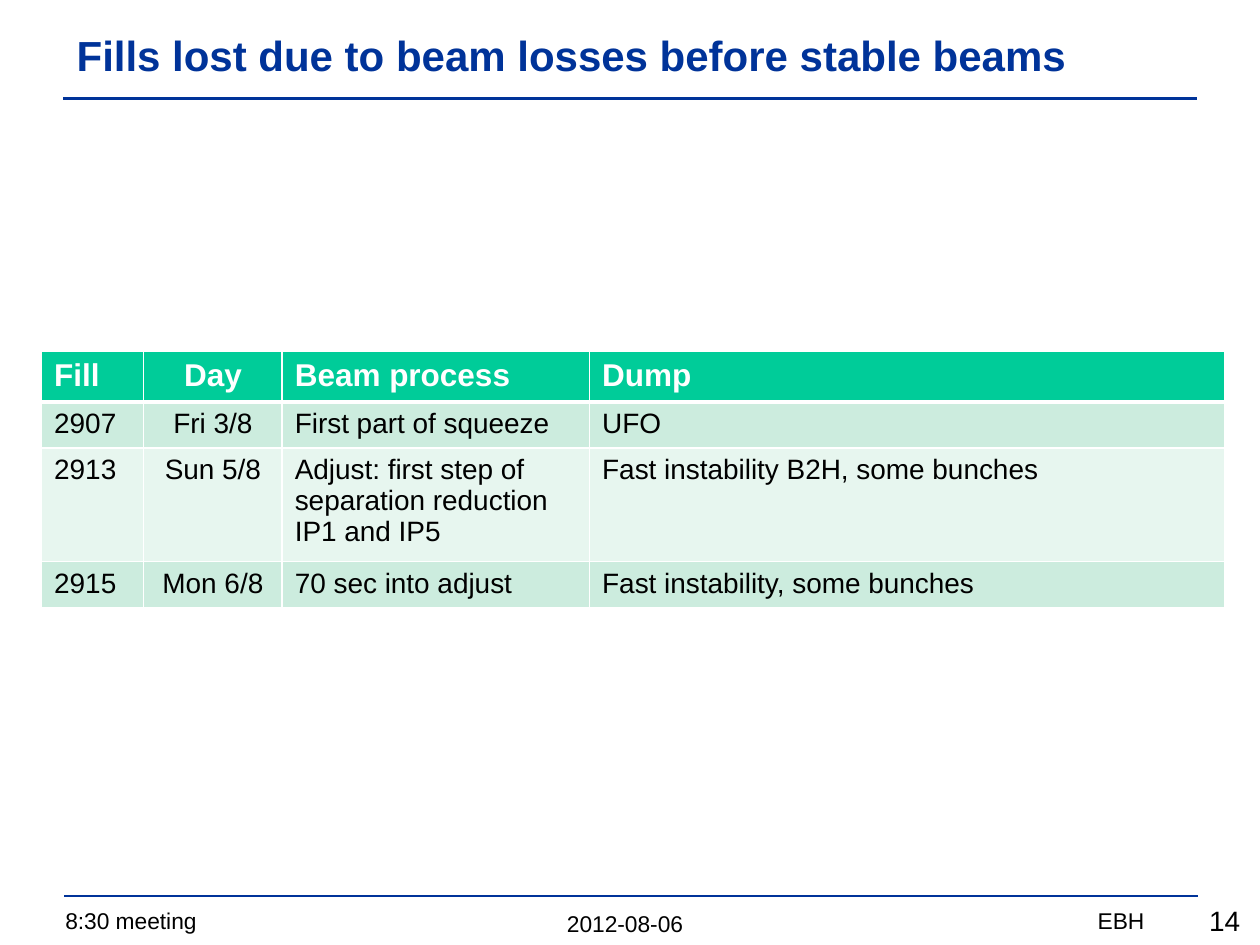
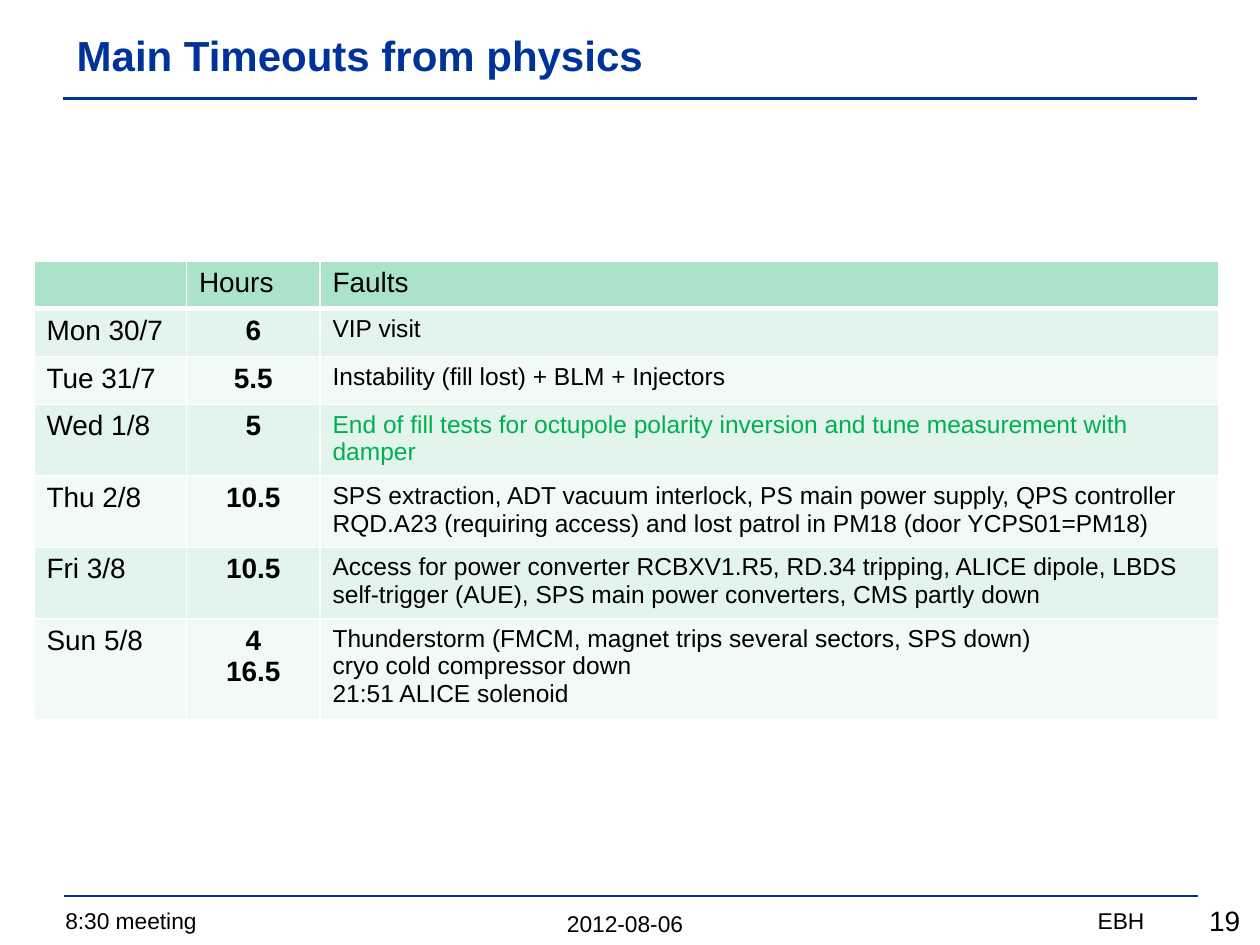
import pptx
import pptx.util
import pptx.dml.color
import pptx.enum.shapes
import pptx.enum.text
import pptx.oxml.ns
import lxml.etree
from dataclasses import dataclass

Inches = pptx.util.Inches
Pt = pptx.util.Pt
RGB = pptx.dml.color.RGBColor.from_string
ALIGN = pptx.enum.text.PP_ALIGN
ANCHOR = pptx.enum.text.MSO_ANCHOR
qn = pptx.oxml.ns.qn


@dataclass(frozen=True)
class Theme:
    font: str = "Arial"
    navy: str = "003399"
    black: str = "000000"
    white: str = "FFFFFF"
    green: str = "00B050"
    title: int = 24
    head: int = 18
    body: int = 16
    detail: int = 14
    footer: int = 13
    rule: float = 1.5
    border: int = 1
    head_border: int = 3


theme = Theme()


def style(p, size, color=theme.black, bold=False, align=ALIGN.LEFT):
    p.alignment = align
    p.font.name = theme.font
    p.font.size = Pt(size)
    p.font.bold = bold
    p.font.color.rgb = RGB(color)


def add_text(s, box, text, size, color=theme.black, bold=False, align=ALIGN.LEFT):
    sp = s.shapes.add_textbox(*map(Inches, box))
    tf = sp.text_frame
    tf.word_wrap = True
    tf.vertical_anchor = ANCHOR.MIDDLE if bold else ANCHOR.TOP
    p = tf.paragraphs[0]
    p.add_run().text = text
    style(p, size, color, bold, align)


slides = [
    dict(
        title="Fills lost due to beam losses before stable beams",
        number="14",
        origin=(0.33, 2.79),
        cols=[0.81, 1.1, 2.44, 5.04],
        heights=[0.39, 0.34, 0.84, 0.34],
        fills=["00CC99", "CCECDE", "E7F6EF"],
        head=(theme.head, theme.white, True),
        body=[(theme.body, False)] * 4,
        head_centred=True,
        rows=[
            ["Fill", "Day", "Beam process", "Dump"],
            ["2907", "Fri 3/8", "First part of squeeze", "UFO"],
            ["2913", "Sun 5/8", "Adjust: first step of separation reduction IP1 and IP5",
             "Fast instability B2H, some bunches"],
            ["2915", "Mon 6/8", "70 sec into adjust", "Fast instability, some bunches"],
        ],
        highlight=None,
    ),
    dict(
        title="Main Timeouts from physics",
        number="19",
        origin=(0.27, 2.07),
        cols=[1.21, 1.06, 7.13],
        heights=[0.38, 0.38, 0.38, 0.53, 0.53, 0.53, 0.76],
        fills=["AAE2CA", "E2F4EC", "F1FAF6"],
        head=(theme.body, theme.black, False),
        body=[(theme.body, False), (theme.body, True), (theme.detail, False)],
        head_centred=False,
        rows=[
            ["", "Hours", "Faults"],
            ["Mon 30/7", "6", "VIP visit"],
            ["Tue 31/7", "5.5", "Instability (fill lost) + BLM + Injectors"],
            ["Wed 1/8", "5", "End of fill tests for octupole polarity inversion and "
             "tune measurement with damper"],
            ["Thu 2/8", "10.5", "SPS extraction, ADT vacuum interlock, PS main power supply, "
             "QPS controller RQD.A23 (requiring access) and lost patrol in PM18 "
             "(door YCPS01=PM18)"],
            ["Fri 3/8", "10.5", "Access for power converter RCBXV1.R5, RD.34 tripping, "
             "ALICE dipole, LBDS self-trigger (AUE), SPS main power converters, "
             "CMS partly down"],
            ["Sun 5/8", "4\n16.5", "Thunderstorm (FMCM, magnet trips several sectors, SPS down)\n"
             "cryo cold compressor down\n21:51 ALICE solenoid"],
        ],
        highlight=(3, 2),
    ),
]

prs = pptx.Presentation()
prs.slide_width = Inches(10)
prs.slide_height = Inches(7.5)

for page in slides:
    s = prs.slides.add_slide(prs.slide_layouts[6])

    add_text(s, (2.42, 7.17, 5.08, 0.32), "2012-08-06", theme.footer, align=ALIGN.CENTER)
    add_text(s, (0.42, 7.15, 3.7, 0.32), "8:30 meeting", theme.footer)
    add_text(s, (6.26, 7.15, 2.92, 0.32), "EBH", theme.footer, align=ALIGN.RIGHT)
    add_text(s, (8.79, 7.12, 1.15, 0.37), page["number"], theme.body, align=ALIGN.RIGHT)
    for x, y in [(0.51, 7.11), (0.5, 0.78)]:
        rule = s.shapes.add_connector(
            pptx.enum.shapes.MSO_CONNECTOR.STRAIGHT,
            Inches(x), Inches(y), Inches(x + 9), Inches(y))
        rule.line.color.rgb = RGB(theme.navy)
        rule.line.width = Pt(theme.rule)
        lxml.etree.SubElement(rule.element.spPr, qn("a:effectLst"))
    add_text(s, (0.51, 0.09, 8.99, 0.68), page["title"], theme.title, theme.navy, True)

    rows, cols, heights = page["rows"], page["cols"], page["heights"]
    x, y = page["origin"]
    table = s.shapes.add_table(
        len(rows), len(cols), Inches(x), Inches(y),
        Inches(sum(cols)), Inches(sum(heights))).table
    for column, width in zip(table.columns, cols):
        column.width = Inches(width)
    for row, height in zip(table.rows, heights):
        row.height = Inches(height)

    head_fill, *bands = page["fills"]
    for i, row in enumerate(rows):
        for j, text in enumerate(row):
            cell = table.cell(i, j)
            cell.text = text
            size, color, bold = page["head"]
            if i > 0:
                size, bold = page["body"][j]
                color = theme.green if (i, j) == page["highlight"] else theme.black
            centred = j == 1 and (i > 0 or page["head_centred"])
            for p in cell.text_frame.paragraphs:
                style(p, size, color, bold, ALIGN.CENTER if centred else ALIGN.LEFT)

            tcPr = cell._tc.get_or_add_tcPr()
            for side in "LRTB":
                thick = (i, side) in [(0, "B"), (1, "T")]
                width = Pt(theme.head_border if thick else theme.border)
                ln = lxml.etree.SubElement(tcPr, qn(f"a:ln{side}"), w=str(width))
                fill = lxml.etree.SubElement(ln, qn("a:solidFill"))
                lxml.etree.SubElement(fill, qn("a:srgbClr"), val=theme.white)
            cell.fill.solid()
            cell.fill.fore_color.rgb = RGB(bands[(i - 1) % 2] if i else head_fill)

prs.save("out.pptx")
